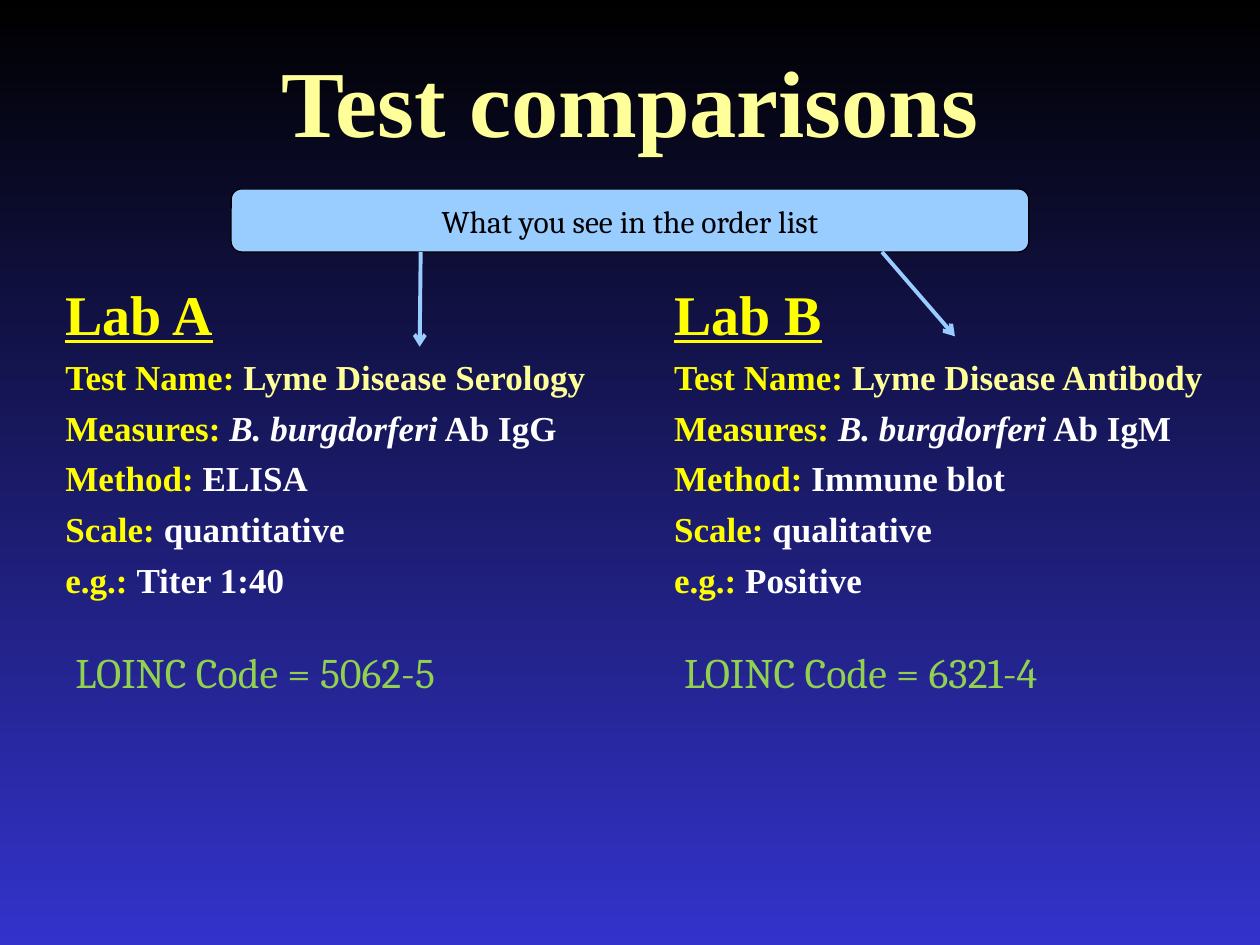
import pptx
import pptx.dml.color
import pptx.enum.shapes
import pptx.enum.text
import pptx.oxml
import pptx.oxml.ns
import pptx.util

Cm = pptx.util.Cm
Pt = pptx.util.Pt
RGBColor = pptx.dml.color.RGBColor
ALIGN = pptx.enum.text.PP_ALIGN
ANCHOR = pptx.enum.text.MSO_ANCHOR

BLACK = RGBColor(0x00, 0x00, 0x00)
BLUE = RGBColor(0x33, 0x33, 0xCC)
SKY = RGBColor(0x99, 0xCC, 0xFF)
CREAM = RGBColor(0xFF, 0xFF, 0x99)
YELLOW = RGBColor(0xFF, 0xFF, 0x00)
WHITE = RGBColor(0xFF, 0xFF, 0xFF)
GREEN = RGBColor(0x92, 0xD0, 0x50)


class Painter:
    serif = "Times New Roman"
    plain = "Cambria"

    def __init__(self, slide):
        self.slide = slide

    def backdrop(self, top, bottom):
        fill = self.slide.background.fill
        fill.gradient()
        fill.gradient_angle = 270
        for stop, color, place in zip(fill.gradient_stops, (top, bottom), (0, 1)):
            stop.color.rgb = color
            stop.position = place

    def run(self, para, text, size, color, font, bold=False, italic=False, under=False):
        run = para.add_run()
        run.text = text
        face = run.font
        face.name, face.size, face.color.rgb = font, Pt(size), color
        face.bold, face.italic, face.underline = bold, italic, under

    def box(self, left, top, width, height, anchor=ANCHOR.TOP):
        shape = self.slide.shapes.add_textbox(Cm(left), Cm(top), Cm(width), Cm(height))
        frame = shape.text_frame
        frame.word_wrap = True
        frame.vertical_anchor = anchor
        return frame

    def title(self, text):
        para = self.box(1.9, 0.43, 21.6, 3.18, ANCHOR.MIDDLE).paragraphs[0]
        para.alignment = ALIGN.CENTER
        self.run(para, text, 54, CREAM, self.serif, bold=True)

    def banner(self, text, left, top, width, height):
        shape = self.slide.shapes.add_shape(
            pptx.enum.shapes.MSO_SHAPE.ROUNDED_RECTANGLE,
            Cm(left), Cm(top), Cm(width), Cm(height))
        shape.shadow.inherit = False
        shape.fill.solid()
        shape.fill.fore_color.rgb = SKY
        shape.line.color.rgb = BLACK
        shape.line.width = Pt(0.75)
        frame = shape.text_frame
        frame.vertical_anchor = ANCHOR.MIDDLE
        para = frame.paragraphs[0]
        para.alignment = ALIGN.CENTER
        self.run(para, text, 18, BLACK, self.plain)

    def arrow(self, x1, y1, x2, y2):
        line = self.slide.shapes.add_connector(
            pptx.enum.shapes.MSO_CONNECTOR.STRAIGHT, Cm(x1), Cm(y1), Cm(x2), Cm(y2))
        line.line.color.rgb = SKY
        line.line.width = Pt(2.25)
        tail = pptx.oxml.parse_xml(
            f'<a:tailEnd {pptx.oxml.ns.nsdecls("a")} type="arrow"/>')
        line.line._get_or_add_ln().append(tail)
        bare = pptx.oxml.parse_xml(f'<a:effectLst {pptx.oxml.ns.nsdecls("a")}/>')
        line._element.spPr.append(bare)

    def lab(self, left, width, head, rows):
        frame = self.box(left, 5.51, width, 11.43)
        para = frame.paragraphs[0]
        para.space_before = Pt(5)
        self.run(para, head, 32, YELLOW, self.serif, bold=True, under=True)
        for label, parts in rows:
            para = frame.add_paragraph()
            para.space_before = Pt(5)
            self.run(para, label + " ", 20, YELLOW, self.serif, bold=True)
            for text, color, italic in parts:
                self.run(para, text, 20, color, self.serif, bold=True, italic=italic)

    def code(self, left, text):
        para = self.box(left, 12.9, 8.76, 1.3).paragraphs[0]
        self.run(para, text, 24, GREEN, self.plain)


LABS = [
    ("Lab A", 11.86, "Serology", "IgG", "ELISA", "quantitative", "Titer 1:40", "5062-5"),
    ("Lab B", 12.06, "Antibody", "IgM", "Immune blot", "qualitative", "Positive", "6321-4"),
]


def main():
    deck = pptx.Presentation()
    deck.slide_width, deck.slide_height = Cm(25.4), Cm(19.05)
    page = Painter(deck.slides.add_slide(deck.slide_layouts[6]))
    page.backdrop(BLACK, BLUE)
    page.title("Test comparisons")
    for i, (head, width, test, target, method, scale, sample, code) in enumerate(LABS):
        shift = i * 12.27
        page.lab(1.07 + shift, width, head, [
            ("Test Name:", [("Lyme Disease " + test, CREAM, False)]),
            ("Measures:", [("B. burgdorferi", WHITE, True),
                           (" Ab " + target, WHITE, False)]),
            ("Method:", [(method, WHITE, False)]),
            ("Scale:", [(scale, WHITE, False)]),
            ("e.g.:", [(sample, WHITE, False)]),
        ])
        page.code(1.27 + shift, "LOINC Code = " + code)
    page.banner("What you see in the order list", 4.66, 3.81, 16.08, 1.27)
    page.arrow(8.48, 5.08, 8.46, 6.99)
    page.arrow(17.78, 5.08, 19.25, 6.78)
    deck.save("out.pptx")


if __name__ == "__main__":
    main()
